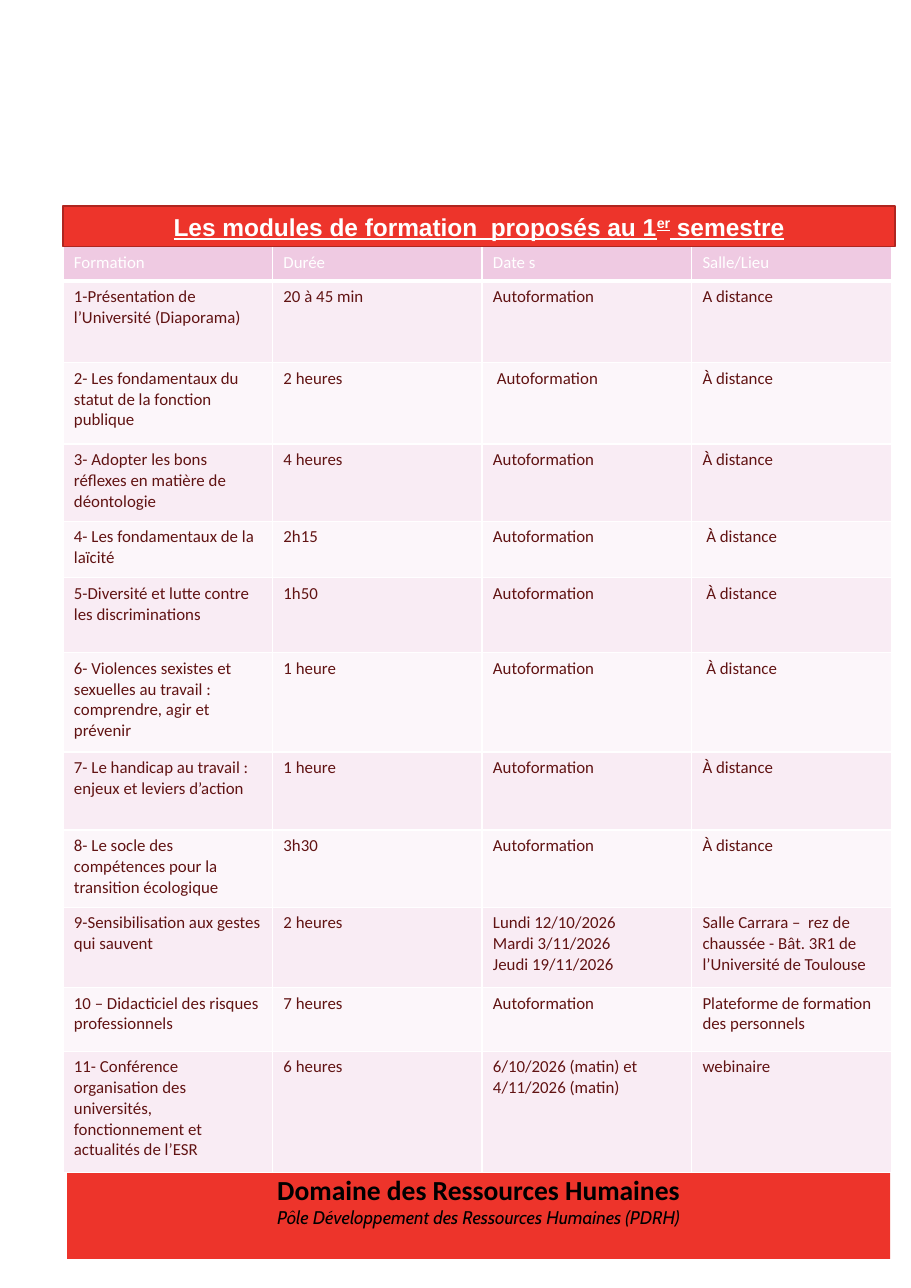
from lxml.etree import SubElement
from pptx import Presentation
from pptx.dml.color import RGBColor
from pptx.enum.shapes import MSO_SHAPE as Shape
from pptx.enum.text import MSO_ANCHOR as Anchor, PP_ALIGN as Align
from pptx.oxml.ns import qn
from pptx.util import Cm, Pt

WHITE = RGBColor(0xFF, 0xFF, 0xFF)
BLACK = RGBColor(0x00, 0x00, 0x00)
RED = RGBColor(0xED, 0x34, 0x2B)
DARK_RED = RGBColor(0xAF, 0x26, 0x20)
MAROON = RGBColor(0x61, 0x13, 0x13)
HEADER_PINK = RGBColor(0xEF, 0xCA, 0xE2)
BAND_PINKS = (RGBColor(0xFC, 0xF6, 0xFA), RGBColor(0xF9, 0xEC, 0xF4))

COLUMN_WIDTHS = (4.83, 4.83, 4.83, 4.62)
ROW_HEIGHTS = (0.79, 1.88, 1.88, 1.78, 1.3, 1.73, 2.29, 1.8, 1.78, 1.85, 1.47, 2.79)
MODULES = (
    ("Formation", "Durée", "Date s", "Salle/Lieu"),
    ("1-Présentation de l’Université (Diaporama)", "20 à 45 min",
     "Autoformation", "A distance"),
    ("2- Les fondamentaux du statut de la fonction publique", "2 heures",
     " Autoformation", "À distance"),
    ("3- Adopter les bons réflexes en matière de déontologie", "4 heures",
     "Autoformation", "À distance"),
    ("4- Les fondamentaux de la laïcité", "2h15", "Autoformation", " À distance"),
    ("5-Diversité et lutte contre les discriminations", "1h50",
     "Autoformation", " À distance"),
    ("6- Violences sexistes et sexuelles au travail : comprendre, agir et prévenir",
     "1 heure", "Autoformation", " À distance"),
    ("7- Le handicap au travail : enjeux et leviers d’action", "1 heure",
     "Autoformation", "À distance"),
    ("8- Le socle des compétences pour la transition écologique", "3h30",
     "Autoformation", "À distance"),
    ("9-Sensibilisation aux gestes qui sauvent", "2 heures",
     "Lundi 12/10/2026\nMardi 3/11/2026\nJeudi 19/11/2026",
     "Salle Carrara –  rez de chaussée - Bât. 3R1 de l’Université de Toulouse"),
    ("10 – Didacticiel des risques professionnels", "7 heures",
     "Autoformation", "Plateforme de formation des personnels"),
    ("11- Conférence organisation des universités, fonctionnement et actualités de l’ESR",
     "6 heures", "6/10/2026 (matin) et 4/11/2026 (matin)", "webinaire"),
)


def set_font(para, name, size, color, bold=False, italic=False, underline=False):
    font = para.font
    font.name, font.size = name, Pt(size)
    font.bold, font.italic, font.underline = bold, italic, underline
    font.color.rgb = color


def add_borders(cell, bottom_width):
    """Draw white cell borders, 1 pt except at the bottom."""
    properties = cell._tc.get_or_add_tcPr()
    widths = {"a:lnL": 1, "a:lnR": 1, "a:lnT": 1, "a:lnB": bottom_width}
    for position, (tag, width) in enumerate(widths.items()):
        line = SubElement(properties, qn(tag), w=str(Pt(width)))
        fill = SubElement(line, qn("a:solidFill"))
        SubElement(fill, qn("a:srgbClr"), val=str(WHITE))
        properties.insert(position, line)


def fill_cell(cell, text, row_number):
    is_header = row_number == 0
    cell.fill.solid()
    cell.fill.fore_color.rgb = HEADER_PINK if is_header else BAND_PINKS[row_number % 2]
    add_borders(cell, 3 if is_header else 1)
    cell.text = text
    for para in cell.text_frame.paragraphs:
        set_font(para, "Calibri", 11, WHITE if is_header else MAROON)


def add_module_table(page):
    frame = page.shapes.add_table(len(MODULES), len(COLUMN_WIDTHS), Cm(1.45), Cm(5.69),
                                  Cm(sum(COLUMN_WIDTHS)), Cm(sum(ROW_HEIGHTS)))
    table = frame.table
    for column, width in zip(table.columns, COLUMN_WIDTHS):
        column.width = Cm(width)
    for row_number, (row, height) in enumerate(zip(table.rows, ROW_HEIGHTS)):
        row.height = Cm(height)
        for cell, text in zip(row.cells, MODULES[row_number]):
            fill_cell(cell, text, row_number)


def add_banner(page, left, top, width, height, anchor):
    banner = page.shapes.add_shape(Shape.RECTANGLE, Cm(left), Cm(top), Cm(width), Cm(height))
    banner.shadow.inherit = False
    banner.fill.solid()
    banner.fill.fore_color.rgb = RED
    banner.text_frame.word_wrap = True
    banner.text_frame.vertical_anchor = anchor
    return banner


def add_footer(page):
    banner = add_banner(page, 1.55, 27.05, 18.97, 1.98, Anchor.TOP)
    banner.line.fill.background()
    box = banner.text_frame
    box.margin_left = box.margin_top = box.margin_right = box.margin_bottom = 0
    box.text = "Domaine des Ressources Humaines\nPôle Développement des Ressources Humaines (PDRH)"
    department, unit = box.paragraphs
    department.alignment = unit.alignment = Align.CENTER
    set_font(department, "Calibri", 18, BLACK, bold=True)
    set_font(unit, "Cabin", 12, BLACK, italic=True)


def add_title(page):
    banner = add_banner(page, 1.45, 4.75, 19.18, 0.94, Anchor.MIDDLE)
    banner.line.color.rgb = DARK_RED
    banner.line.width = Pt(1)
    para = banner.text_frame.paragraphs[0]
    para.alignment = Align.CENTER
    set_font(para, "Arial", 16, WHITE, bold=True, underline=True)
    for text, baseline in (("Les modules de formation  proposés au 1", 0),
                           ("er", 30000), (" semestre", 0)):
        span = para.add_run()
        span.text = text
        if baseline:
            span._r.get_or_add_rPr().set("baseline", str(baseline))


def main():
    deck = Presentation()
    deck.slide_width, deck.slide_height = Cm(21), Cm(29.7)
    page = deck.slides.add_slide(deck.slide_layouts[6])
    add_module_table(page)
    add_footer(page)
    add_title(page)
    deck.save("out.pptx")


if __name__ == "__main__":
    main()
